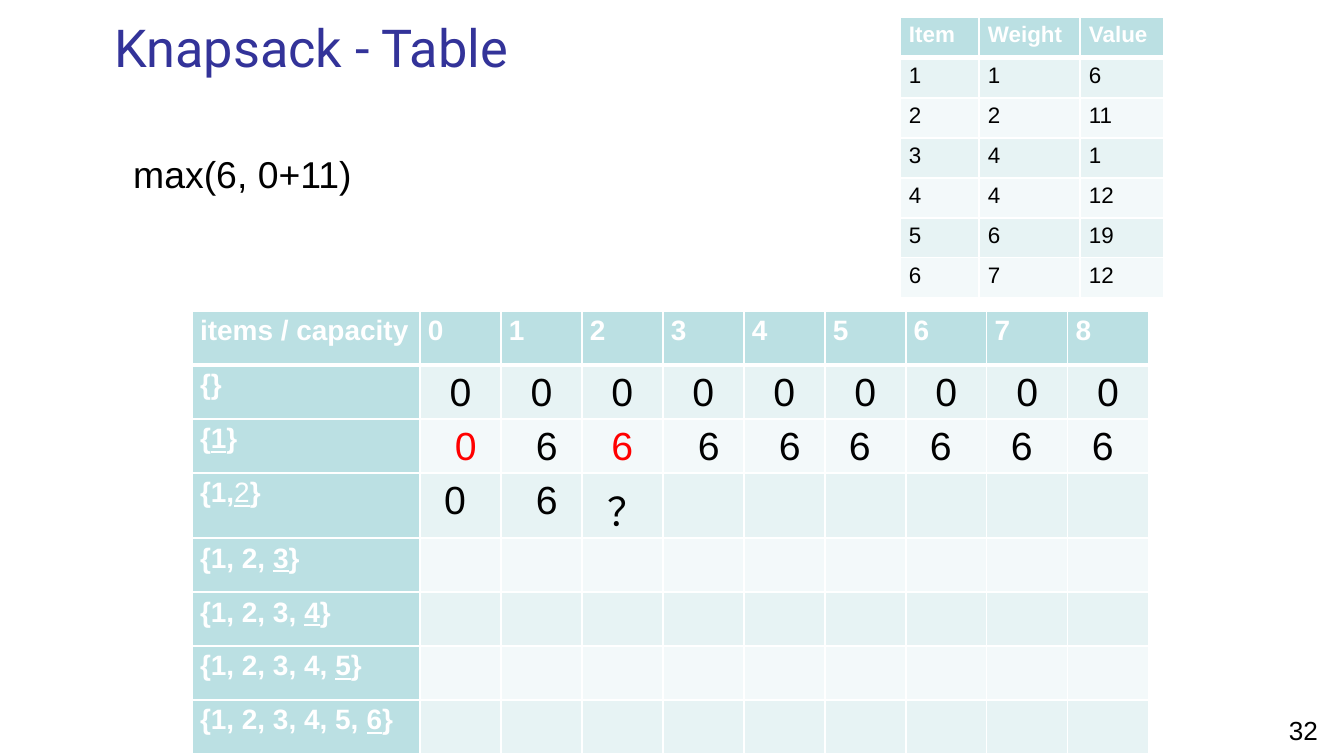
from lxml import etree
from pptx import Presentation
from pptx.dml.color import RGBColor
from pptx.enum.text import MSO_ANCHOR, MSO_AUTO_SIZE, PP_ALIGN
from pptx.oxml.ns import qn
from pptx.util import Pt

LEFT, CENTER = PP_ALIGN.LEFT, PP_ALIGN.CENTER
TOP, MIDDLE = MSO_ANCHOR.TOP, MSO_ANCHOR.MIDDLE
FIT_SHAPE, NO_FIT = MSO_AUTO_SIZE.SHAPE_TO_FIT_TEXT, MSO_AUTO_SIZE.NONE
TITLE_ONLY = 5

EMU_PER_PX = 914400 / 134.4
COLORS = {
    "title": "333399",
    "text": "000000",
    "marked": "FF0000",
    "white": "FFFFFF",
    "header": "BBE0E3",
    "odd": "E7F3F4",
    "even": "F3F9FA",
}

ITEMS = [
    ("Item", "Weight", "Value"),
    (1, 1, 6),
    (2, 2, 11),
    (3, 4, 1),
    (4, 4, 12),
    (5, 6, 19),
    (6, 7, 12),
]
NBSP = chr(160)
BEFORE_SIX, AFTER_SIX = NBSP + "6", "6" + NBSP
BEST_VALUES = [
    ["0"] * 9,
    [NBSP + "0", BEFORE_SIX, "6"] + [BEFORE_SIX] * 2 + [AFTER_SIX] * 4,
    ["0" + NBSP, BEFORE_SIX, NBSP + "？"],
]
COMPARED_CELLS = {(2, 1), (2, 3)}


def px(length):
    return round(length * EMU_PER_PX)


def rgb(name):
    return RGBColor.from_string(COLORS[name])


def format_span(span, size, color="text", bold=False, font="Arial"):
    span.font.name = font
    span.font.size = Pt(size)
    span.font.bold = bold
    span.font.color.rgb = rgb(color)


def format_para(para, size, color="text", bold=False, align=LEFT, spacing=1.0):
    para.alignment = align
    para.line_spacing = spacing
    for span in para.runs:
        format_span(span, size, color, bold)


def set_title(page, text, left, top, width, height):
    title = page.shapes.title
    title.left, title.top = px(left), px(top)
    title.width, title.height = px(width), px(height)
    frame = title.text_frame
    frame.text = text
    frame.vertical_anchor = MIDDLE
    frame.auto_size = NO_FIT
    frame.paragraphs[0].alignment = LEFT
    format_span(frame.paragraphs[0].runs[0], 28, "title", font="Roboto")


def add_text(page, text, left, top, width, height, size, align=LEFT, fit=NO_FIT):
    box = page.shapes.add_textbox(px(left), px(top), px(width), px(height))
    frame = box.text_frame
    frame.text = text
    frame.word_wrap = False
    frame.auto_size = fit
    format_para(frame.paragraphs[0], size, align=align)


def set_borders(cell, top, bottom):
    """Draw white cell edges; top and bottom are widths in points."""
    properties = cell._tc.get_or_add_tcPr()
    widths = {"a:lnL": 1, "a:lnR": 1, "a:lnT": top, "a:lnB": bottom}
    for index, (tag, width) in enumerate(widths.items()):
        line = etree.Element(qn(tag), w=str(Pt(width)))
        fill = etree.SubElement(line, qn("a:solidFill"))
        etree.SubElement(fill, qn("a:srgbClr"), val=COLORS["white"])
        properties.insert(index, line)


def add_grid(page, left, top, columns, rows, inset_x, inset_y, label_column):
    """Add a banded table with a header row and, if asked, a label column."""
    shape = page.shapes.add_table(
        len(rows), len(columns), px(left), px(top), px(sum(columns)), px(sum(rows)))
    table = shape.table
    for column, width in zip(table.columns, columns):
        column.width = px(width)
    for row_index, height in enumerate(rows):
        table.rows[row_index].height = px(height)
        for column_index in range(len(columns)):
            cell = table.cell(row_index, column_index)
            is_header = row_index == 0 or (label_column and column_index == 0)
            band = "odd" if row_index % 2 else "even"
            cell.fill.solid()
            cell.fill.fore_color.rgb = rgb("header" if is_header else band)
            cell.margin_left = cell.margin_right = px(inset_x)
            cell.margin_top = cell.margin_bottom = px(inset_y)
            cell.vertical_anchor = TOP
            set_borders(cell, 3 if row_index == 1 else 1, 3 if row_index == 0 else 1)
    return table


def fill_cell(cell, text, *args, **kwargs):
    para = cell.text_frame.paragraphs[0]
    para.text = str(text)
    format_para(para, *args, **kwargs)


def fill_set_label(cell, last):
    """Write the set of items 1 to last, with the newest item underlined."""
    para = cell.text_frame.paragraphs[0]
    earlier = "{1," if last == 2 else "{" + "".join(f"{n}, " for n in range(1, last))
    for text in (earlier, str(last), "}"):
        para.add_run().text = text
    format_para(para, 15, "white", True, spacing=1.15)
    newest = para.runs[1]
    newest.font.underline = True
    newest.font.bold = last != 2


def add_item_table(page):
    table = add_grid(page, 900, 17, [79, 101, 84], [41] + [40] * 6, 9, 5, False)
    for row_index, values in enumerate(ITEMS):
        is_header = row_index == 0
        for column_index, value in enumerate(values):
            fill_cell(table.cell(row_index, column_index), value, 12,
                      "white" if is_header else "text", is_header)


def add_capacity_table(page):
    table = add_grid(page, 192, 311, [228] + [81] * 9, [54] * 8, 8, 0, True)
    for column_index, text in enumerate(["items / capacity", *range(9)]):
        fill_cell(table.cell(0, column_index), text, 15, "white", True, spacing=1.15)
    fill_cell(table.cell(1, 0), "{}", 15, "white", True, spacing=1.15)
    for last in range(1, 7):
        fill_set_label(table.cell(last + 1, 0), last)
    for row_index, values in enumerate(BEST_VALUES, 1):
        for column_index, value in enumerate(values, 1):
            color = "marked" if (row_index, column_index) in COMPARED_CELLS else "text"
            fill_cell(table.cell(row_index, column_index), value, 21, color,
                      align=CENTER, spacing=1.15)


def main():
    deck = Presentation()
    deck.slide_width, deck.slide_height = px(1344), px(756)
    page = deck.slides.add_slide(deck.slide_layouts[TITLE_ONLY])
    add_text(page, "32", 1263, 708, 81, 40, 14, CENTER)
    set_title(page, "Knapsack - Table", 101, -16, 857, 126)
    add_item_table(page)
    add_capacity_table(page)
    add_text(page, "max(6, 0+11)", 120, 145, 247, 59, 20, fit=FIT_SHAPE)
    deck.save("out.pptx")


if __name__ == "__main__":
    main()
